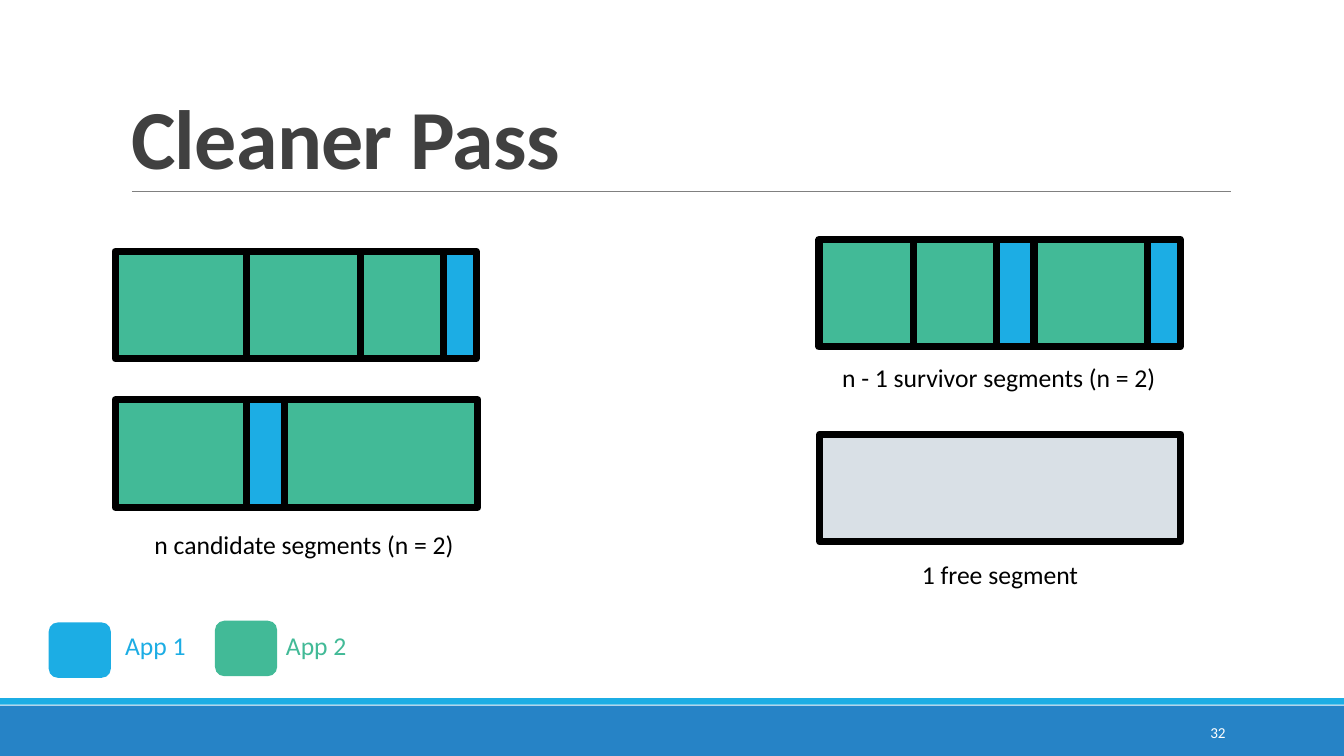
from lxml import etree
from pptx import Presentation, util as u
from pptx.dml.color import RGBColor
from pptx.enum import shapes, text
from pptx.oxml.ns import qn

BLUE, GREEN, GREY = "1CADE4", "42BA97", "D9E0E6"
BLACK, WHITE = "000000", "FFFFFF"
COLUMNS, ROWS = 16, 9

presentation = Presentation()
presentation.slide_width, presentation.slide_height = u.Inches(16), u.Inches(9)
column = presentation.slide_width / COLUMNS
row = presentation.slide_height / ROWS
slide = presentation.slides.add_slide(presentation.slide_layouts[6])


def add_block(left, top, width, height, color, border=0, kind="RECTANGLE"):
    """Draw a filled shape placed in grid columns and rows."""
    shape = slide.shapes.add_shape(
        shapes.MSO_SHAPE[kind], int(left * column), int(top * row),
        int(width * column), int(height * row))
    shape.shadow.inherit = False
    shape.fill.solid()
    shape.fill.fore_color.rgb = RGBColor.from_string(color)
    if border:
        shape.line.width = u.Pt(border)
        shape.line.color.rgb = RGBColor.from_string(BLACK)
    else:
        shape.line.fill.background()


def add_label(left, top, width, height, wording, color=BLACK, align="CENTER",
              anchor="TOP", wrap=True, line_spacing=1.0, **font_format):
    """Write one line of text in a box placed in grid columns and rows."""
    box = slide.shapes.add_textbox(int(left * column), int(top * row),
                                   int(width * column), int(height * row))
    frame = box.text_frame
    frame.word_wrap = wrap
    frame.vertical_anchor = text.MSO_ANCHOR[anchor]
    paragraph = frame.paragraphs[0]
    paragraph.alignment = text.PP_ALIGN[align]
    paragraph.line_spacing = line_spacing
    run = paragraph.add_run()
    run.text = wording
    run.font.color.rgb = RGBColor.from_string(color)
    for name, value in {"name": "Calibri", "size": u.Pt(22), **font_format}.items():
        setattr(run.font, name, value)
    return box


# Footer bars and slide number
add_block(0, 8.4, COLUMNS, 0.6, "2683C6")
add_block(0, 8.31, COLUMNS, 0.08, BLUE)
number = add_label(12.99, 8.48, 1.72, 0.48, "32", WHITE, "RIGHT", "MIDDLE",
                   size=u.Pt(13))

# Title and its rule
title = add_label(1.44, 0.38, 13.2, 1.9, "Cleaner Pass", "404040", "LEFT", "BOTTOM",
                  line_spacing=0.85, size=u.Pt(72), bold=True)
title.text_frame.paragraphs[0].runs[0].font._element.set("spc", "-60")
rule = slide.shapes.add_connector(
    shapes.MSO_CONNECTOR.STRAIGHT, int(1.57 * column), int(2.28 * row),
    int(14.65 * column), int(2.28 * row))
rule.line.width = u.Pt(0.5)
rule.line.color.rgb = RGBColor.from_string("808080")
etree.SubElement(rule._element.spPr, qn("a:effectLst"))

# Segments: left, top, then the blocks from left to right as (width, colour)
segments = [
    (1.37, 2.99, [(1.57, GREEN), (1.35, GREEN), (0.99, GREEN), (0.39, BLUE)]),
    (1.37, 4.76, [(1.57, GREEN), (0.45, BLUE), (2.3, GREEN)]),
    (9.75, 2.85, [(1.12, GREEN), (0.99, GREEN), (0.45, BLUE), (1.35, GREEN),
                  (0.39, BLUE)]),
    (9.76, 5.17, [(4.3, GREY)]),
]
for left, top, blocks in segments:
    for width, color in blocks:
        add_block(left, top, width, 1.28, color, border=6)
        left += width

add_label(1.71, 6.25, 3.82, 0.47, "n candidate segments (n = 2)", wrap=False)
add_label(9.9, 4.26, 3.98, 0.47, "n - 1 survivor segments (n = 2)", wrap=False)
add_label(9.75, 6.61, 4.31, 0.47, "1 free segment")

# Legend: swatch left and top, label left and width
legend = [("App 1", BLUE, 0.58, 7.41, 0.33, 3.04),
          ("App 2", GREEN, 2.56, 7.39, 2.48, 2.57)]
for app, color, swatch_left, swatch_top, label_left, label_width in legend:
    add_block(swatch_left, swatch_top, 0.74, 0.66, color, kind="ROUNDED_RECTANGLE")
    add_label(label_left, 7.18, label_width, 1.01, app, color, anchor="MIDDLE")

for box in (title, number):
    for side, inset in {"left": 0.12, "right": 0.12, "top": 0.06, "bottom": 0.06}.items():
        setattr(box.text_frame, f"margin_{side}", u.Inches(inset))

presentation.save("out.pptx")
